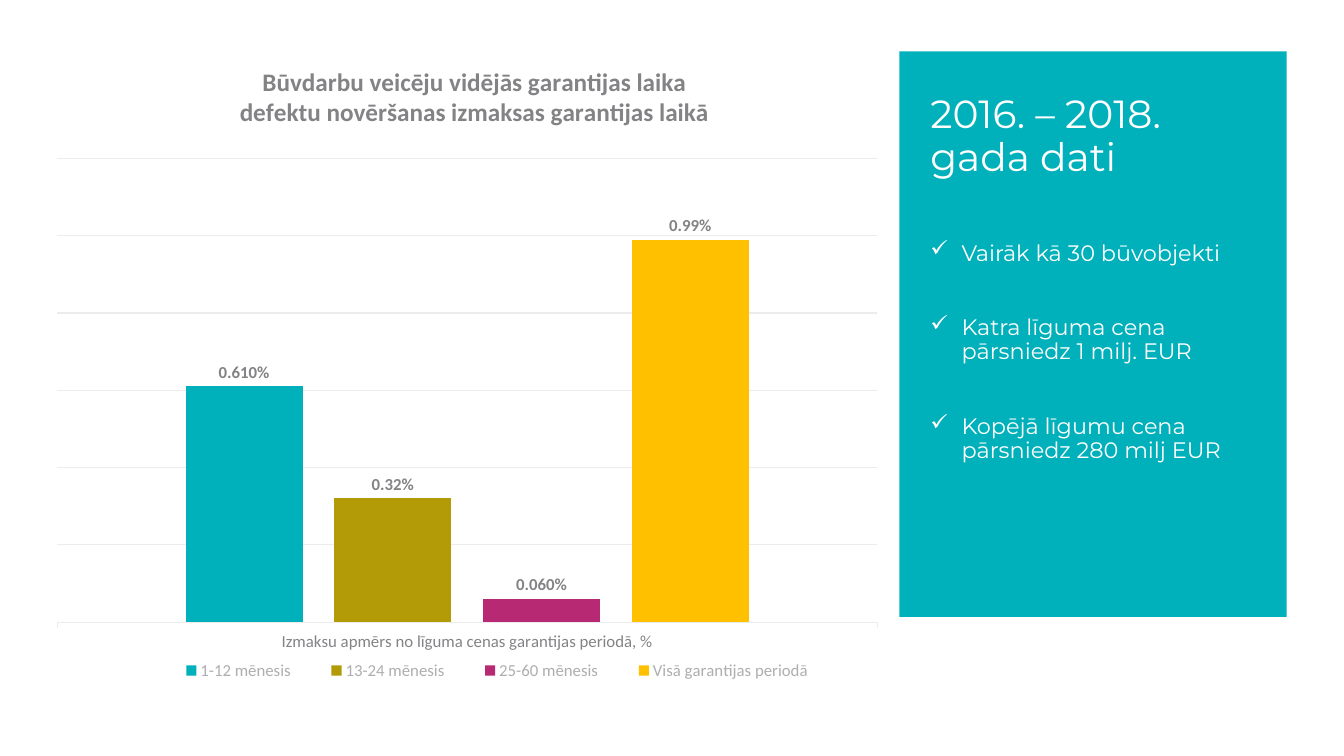
from dataclasses import dataclass

import pptx
import pptx.chart.data
import pptx.dml.color
import pptx.enum.chart
import pptx.enum.shapes
import pptx.enum.text
import pptx.oxml
import pptx.oxml.ns
import pptx.util


@dataclass(frozen=True)
class Theme:
    """Colours, fonts and type sizes of the slide."""
    teal: str = "00B0BA"
    olive: str = "B29B07"
    magenta: str = "B72973"
    amber: str = "FFC000"
    white: str = "FFFFFF"
    grey: str = "838386"
    light_grey: str = "AEAEB0"
    rule: str = "ECECED"
    panel_font: str = "Montserrat"
    chart_font: str = "Calibri"
    heading: float = 28
    chart_title: float = 18
    body: float = 16
    label: float = 12
    chart: float = 10


THEME = Theme()
WIDTH = pptx.util.Inches(13.33)
HEIGHT = pptx.util.Inches(7.5)
CATEGORY = "Izmaksu apmērs no līguma cenas garantijas periodā, %"
CHART_TITLE = ["Būvdarbu veicēju vidējās garantijas laika",
               "defektu novēršanas izmaksas garantijas laikā"]
SERIES = [
    ("1-12 mēnesis", 0.0061, "0.000%", THEME.teal),
    ("13-24 mēnesis", 0.0032, "0.00%", THEME.olive),
    ("25-60 mēnesis", 0.0006, "0.000%", THEME.magenta),
    ("Visā garantijas periodā", 0.0099, "0.00%", THEME.amber),
]
FACTS = ["Vairāk kā 30 būvobjekti",
         "Katra līguma cena pārsniedz 1 milj. EUR",
         "Kopējā līgumu cena pārsniedz 280 milj EUR"]


def area(left, top, width, height):
    """Turn percentages of the slide's size into lengths."""
    return (round(WIDTH * left / 100), round(HEIGHT * top / 100),
            round(WIDTH * width / 100), round(HEIGHT * height / 100))


def rgb(color):
    """Return a colour object for a hexadecimal string."""
    return pptx.dml.color.RGBColor.from_string(color)


def style_font(font, size, color, name, bold=False):
    """Set the size, colour, typeface and weight of a font."""
    font.size = pptx.util.Pt(size)
    font.name = name
    font.bold = bold
    font.color.rgb = rgb(color)


def add_bullet(paragraph, character):
    """Give a paragraph a hanging bullet."""
    properties = paragraph._p.get_or_add_pPr()
    indent = pptx.util.Inches(0.31)
    properties.set("marL", str(indent))
    properties.set("indent", str(-indent))
    bullet = pptx.oxml.parse_xml(
        f'<a:buChar {pptx.oxml.ns.nsdecls("a")} char="{character}"/>')
    properties.append(bullet)


def write(text_frame, lines, *, size, color, font, bold=False,
          bullet=None, spacing=None, gap=0):
    """Write one formatted paragraph for each line of text."""
    for index, line in enumerate(lines):
        paragraph = text_frame.add_paragraph() if index else text_frame.paragraphs[0]
        if bullet:
            add_bullet(paragraph, bullet)
        if spacing:
            paragraph.line_spacing = spacing
        if index and gap:
            paragraph.space_before = pptx.util.Pt(gap)
        run = paragraph.add_run()
        run.text = line
        style_font(run.font, size, color, font, bold)


def add_panel(slide, box, color):
    """Add a plain filled rectangle."""
    panel = slide.shapes.add_shape(pptx.enum.shapes.MSO_SHAPE.RECTANGLE, *box)
    panel.shadow.inherit = False
    panel.fill.solid()
    panel.fill.fore_color.rgb = rgb(color)
    panel.line.fill.background()


def add_text(slide, box, lines, anchor=pptx.enum.text.MSO_ANCHOR.TOP, **text_format):
    """Add a wrapping text box."""
    text_frame = slide.shapes.add_textbox(*box).text_frame
    text_frame.word_wrap = True
    text_frame.vertical_anchor = anchor
    write(text_frame, lines, **text_format)


def set_layout(chart, part, index, target=None, **shares):
    """Place a chart part by shares of the chart's size."""
    element = chart.element.xpath(f"./c:chart/c:{part}")[0]
    for layout in element.xpath("./c:layout"):
        element.remove(layout)
    inner = f'<c:layoutTarget val="{target}"/>' if target else ""
    modes = "".join(f'<c:{key}Mode val="edge"/>' for key in "xy")
    values = "".join(f'<c:{key} val="{value}"/>' for key, value in shares.items())
    element.insert(index, pptx.oxml.parse_xml(
        f'<c:layout {pptx.oxml.ns.nsdecls("c")}><c:manualLayout>'
        f'{inner}{modes}{values}</c:manualLayout></c:layout>'))


def style_axes(chart):
    """Format the category axis and the gridlines of the hidden value axis."""
    category_axis, value_axis = chart.category_axis, chart.value_axis
    category_axis.major_tick_mark = pptx.enum.chart.XL_TICK_MARK.OUTSIDE
    style_font(category_axis.tick_labels.font, THEME.label, THEME.grey, THEME.chart_font)
    value_axis.minimum_scale = 0
    value_axis.maximum_scale = 0.012
    value_axis.major_unit = 0.002
    value_axis.tick_labels.number_format = "0.000%"
    value_axis.tick_labels.number_format_is_linked = False
    value_axis.visible = False
    for line in (category_axis.format.line, value_axis.major_gridlines.format.line):
        line.color.rgb = rgb(THEME.rule)
        line.width = pptx.util.Pt(0.75)


def style_series(series, number_format, color):
    """Colour the bars of a series and label their values."""
    series.format.fill.solid()
    series.format.fill.fore_color.rgb = rgb(color)
    labels = series.data_labels
    labels.show_value = True
    labels.number_format = number_format
    labels.number_format_is_linked = False
    labels.position = pptx.enum.chart.XL_LABEL_POSITION.OUTSIDE_END
    style_font(labels.font, THEME.label, THEME.grey, THEME.chart_font, bold=True)


def add_cost_chart(slide, box):
    """Add the column chart of warranty costs."""
    data = pptx.chart.data.CategoryChartData(number_format="0.000%")
    data.categories = [CATEGORY]
    for name, value, _, _ in SERIES:
        data.add_series(name, [value])
    chart = slide.shapes.add_chart(
        pptx.enum.chart.XL_CHART_TYPE.COLUMN_CLUSTERED, *box, data).chart
    style_font(chart.font, THEME.chart, THEME.grey, THEME.chart_font)
    plot = chart.plots[0]
    plot.vary_by_categories = False
    plot.gap_width = 219
    plot.overlap = -27
    for series, (_, _, number_format, color) in zip(plot.series, SERIES):
        style_series(series, number_format, color)
    style_axes(chart)
    chart.has_title = True
    write(chart.chart_title.text_frame, CHART_TITLE, size=THEME.chart_title,
          color=THEME.grey, font=THEME.chart_font, bold=True)
    chart.has_legend = True
    chart.legend.position = pptx.enum.chart.XL_LEGEND_POSITION.BOTTOM
    chart.legend.include_in_layout = False
    style_font(chart.legend.font, THEME.label, THEME.light_grey, THEME.chart_font)
    set_layout(chart, "plotArea", 0, "inner", x=0.02, y=0.16, w=0.96, h=0.72)
    set_layout(chart, "title", 1, x=0.23, y=0.01)
    set_layout(chart, "legend", 1, x=0.13, y=0.92, w=0.81, h=0.07)


def main():
    """Build and save the slide."""
    presentation = pptx.Presentation()
    presentation.slide_width, presentation.slide_height = WIDTH, HEIGHT
    slide = presentation.slides.add_slide(presentation.slide_layouts[6])
    add_panel(slide, area(66.92, 6.8, 28.81, 74.8), THEME.teal)
    panel_format = {"color": THEME.white, "font": THEME.panel_font, "spacing": 0.9}
    add_text(slide, area(68.49, 12.53, 25.73, 11.87), ["2016. – 2018. gada dati"],
             anchor=pptx.enum.text.MSO_ANCHOR.BOTTOM, size=THEME.heading, **panel_format)
    add_text(slide, area(68.49, 31.33, 25.73, 50.27), FACTS,
             size=THEME.body, bullet="✓", gap=36, **panel_format)
    add_cost_chart(slide, area(3, 7.33, 63.54, 85.2))
    presentation.save("out.pptx")


if __name__ == "__main__":
    main()
